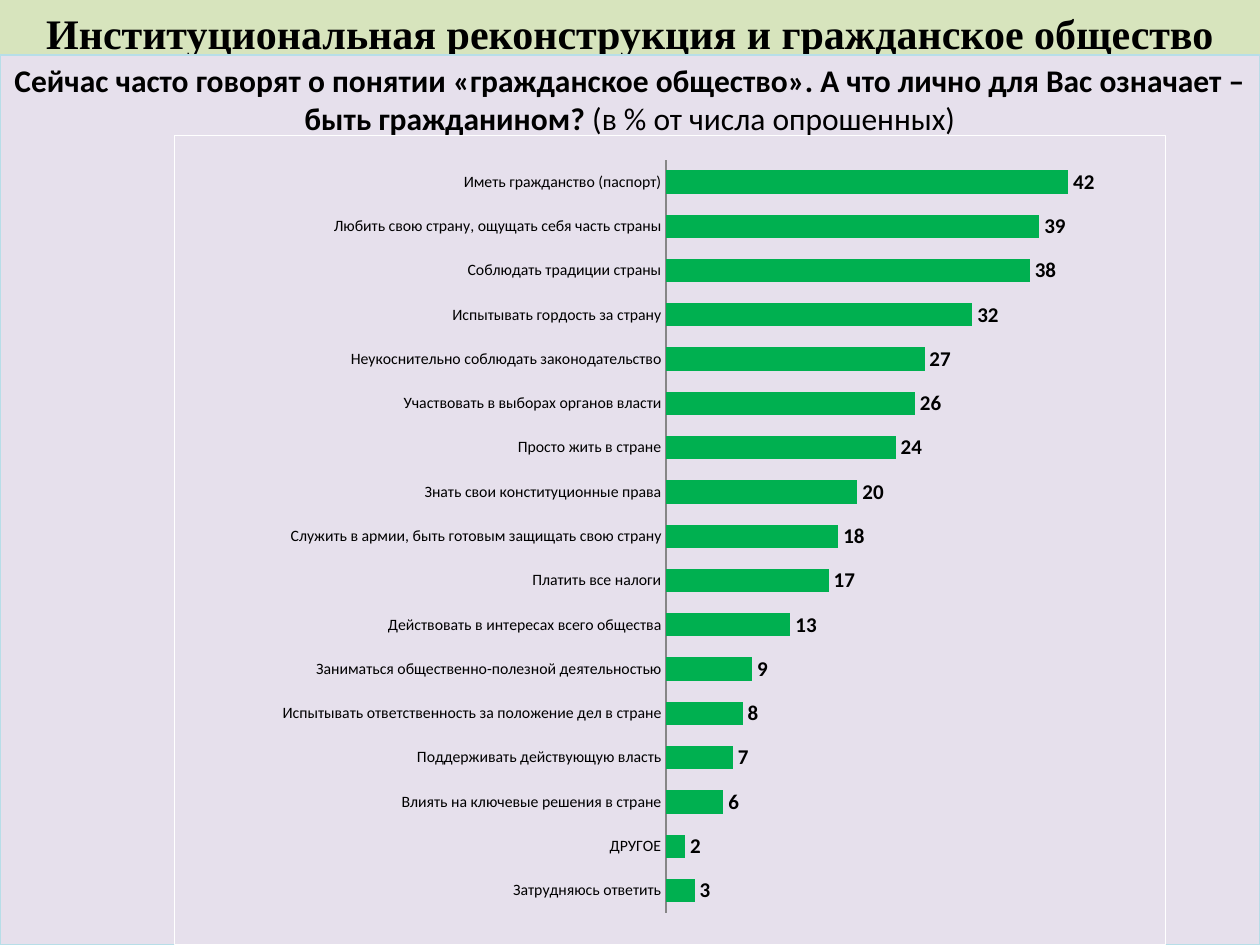
import pptx
import pptx.chart.data
import pptx.dml.color
import pptx.enum.chart
import pptx.enum.shapes
import pptx.enum.text
import pptx.oxml
import pptx.oxml.ns
import pptx.util

EMU_PER_PX = 914400 / 126


def px(length):
    return pptx.util.Emu(round(length * EMU_PER_PX))


def color(hex_code):
    return pptx.dml.color.RGBColor.from_string(hex_code)


answers = [
    ("Затрудняюсь ответить", 3),
    ("ДРУГОЕ", 2),
    ("Влиять на ключевые решения в стране", 6),
    ("Поддерживать действующую власть", 7),
    ("Испытывать ответственность за положение дел в стране", 8),
    ("Заниматься общественно-полезной деятельностью", 9),
    ("Действовать в интересах всего общества", 13),
    ("Платить все налоги", 17),
    ("Служить в армии, быть готовым защищать свою страну", 18),
    ("Знать свои конституционные права", 20),
    ("Просто жить в стране", 24),
    ("Участвовать в выборах органов власти", 26),
    ("Неукоснительно соблюдать законодательство", 27),
    ("Испытывать гордость за страну", 32),
    ("Соблюдать традиции страны", 38),
    ("Любить свою страну, ощущать себя часть страны", 39),
    ("Иметь гражданство (паспорт)", 42),
]

heading_runs = [("Институциональная реконструкция и гражданское общество", True)]
question_runs = [
    ("Сейчас часто говорят о понятии «гражданское общество». "
     "А что лично для Вас означает – быть гражданином?", True),
    (" (в % от числа опрошенных)", False),
]
middle = pptx.enum.text.MSO_ANCHOR.MIDDLE
top = pptx.enum.text.MSO_ANCHOR.TOP
panels = [
    (0, 65, "D7E4BD", None, middle, "Times New Roman", 24, 0, heading_runs),
    (55, 890, "E6E0EC", "B7DEE8", top, "Calibri", 18, 3.6, question_runs),
]

presentation = pptx.Presentation()
presentation.slide_width = px(1260)
presentation.slide_height = px(945)
slide = presentation.slides.add_slide(presentation.slide_layouts[6])

for y, height, fill, outline, anchor, font, size, space, runs in panels:
    panel = slide.shapes.add_shape(
        pptx.enum.shapes.MSO_SHAPE.RECTANGLE, px(0), px(y), px(1260), px(height))
    panel.shadow.inherit = False
    panel.fill.solid()
    panel.fill.fore_color.rgb = color(fill)
    if outline:
        panel.line.color.rgb = color(outline)
        panel.line.width = pptx.util.Pt(0.75)
    else:
        panel.line.fill.background()
    panel.text_frame.word_wrap = True
    panel.text_frame.vertical_anchor = anchor
    paragraph = panel.text_frame.paragraphs[0]
    paragraph.alignment = pptx.enum.text.PP_ALIGN.CENTER
    paragraph.space_before = pptx.util.Pt(space)
    for text, bold in runs:
        run = paragraph.add_run()
        run.text = text
        run.font.name = font
        run.font.size = pptx.util.Pt(size)
        run.font.bold = bold
        run.font.color.rgb = color("000000")

survey = pptx.chart.data.CategoryChartData()
survey.categories = [answer for answer, percent in answers]
survey.add_series("Series 1", [percent for answer, percent in answers])
chart = slide.shapes.add_chart(
    pptx.enum.chart.XL_CHART_TYPE.BAR_CLUSTERED,
    px(174), px(135), px(992), px(810), survey).chart
chart.has_title = False
chart.has_legend = False
chart.font.name = "Calibri"
chart.font.size = pptx.util.Pt(10)
chart.font.color.rgb = color("000000")

answer_axis = chart.category_axis
answer_axis.major_tick_mark = pptx.enum.chart.XL_TICK_MARK.NONE
answer_axis.tick_labels.font.size = pptx.util.Pt(9)
answer_axis.format.line.color.rgb = color("868686")
percent_axis = chart.value_axis
percent_axis.minimum_scale = 0
percent_axis.maximum_scale = 45
percent_axis.has_major_gridlines = False
percent_axis.visible = False

bars = chart.plots[0]
bars.gap_width = 90
bars.vary_by_categories = False
bars.series[0].format.fill.solid()
bars.series[0].format.fill.fore_color.rgb = color("00B050")
bars.has_data_labels = True
percent_labels = bars.data_labels
percent_labels.show_value = True
percent_labels.position = pptx.enum.chart.XL_LABEL_POSITION.OUTSIDE_END
percent_labels.font.size = pptx.util.Pt(12)
percent_labels.font.bold = True
percent_labels.font.color.rgb = color("000000")

namespaces = pptx.oxml.ns.nsdecls("c", "a")
plot_area = chart.element.find(".//" + pptx.oxml.ns.qn("c:plotArea"))
for automatic_layout in plot_area.findall(pptx.oxml.ns.qn("c:layout")):
    plot_area.remove(automatic_layout)
plot_area.insert(0, pptx.oxml.parse_xml(
    f'<c:layout {namespaces}><c:manualLayout><c:layoutTarget val="inner"/>'
    '<c:xMode val="edge"/><c:yMode val="edge"/><c:x val="0.496"/><c:y val="0.03"/>'
    '<c:w val="0.435"/><c:h val="0.931"/></c:manualLayout></c:layout>'))
chart_border = pptx.oxml.parse_xml(
    f'<c:spPr {namespaces}><a:noFill/><a:ln w="9525"><a:solidFill>'
    '<a:srgbClr val="FFFFFF"/></a:solidFill></a:ln></c:spPr>')
chart.element.find(pptx.oxml.ns.qn("c:txPr")).addprevious(chart_border)

presentation.save("out.pptx")
